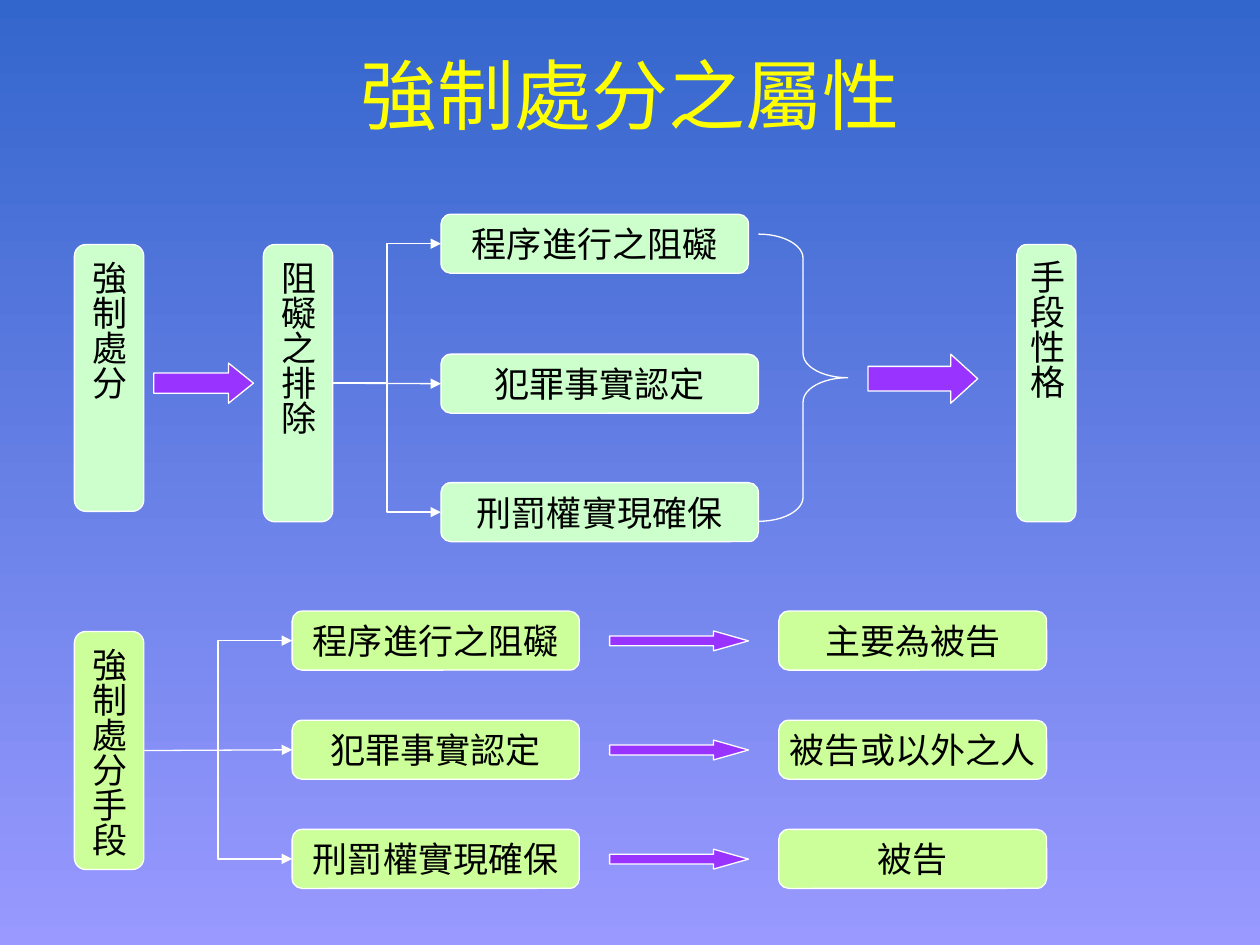
from pptx import Presentation
from pptx.dml.color import RGBColor
from pptx.enum.shapes import MSO_CONNECTOR, MSO_SHAPE
from pptx.enum.text import MSO_ANCHOR, PP_ALIGN
from pptx.oxml.ns import qn
from pptx.util import Cm, Pt
from lxml.etree import SubElement

BG_TOP = RGBColor(0x33, 0x66, 0xCC)
BG_BOTTOM = RGBColor(0x99, 0x99, 0xFF)
YELLOW = RGBColor(0xFF, 0xFF, 0x00)
WHITE = RGBColor(0xFF, 0xFF, 0xFF)
BLACK = RGBColor(0x00, 0x00, 0x00)
MINT = RGBColor(0xCC, 0xFF, 0xCC)
LIME = RGBColor(0xCC, 0xFF, 0x99)
PURPLE = RGBColor(0x99, 0x33, 0xFF)

LEFT_SITE, RIGHT_SITE = 1, 3
BOX_H = 1.19


def write(tf, text, size=20, color=BLACK, font="Arial", wrap=False):
    tf.word_wrap = wrap
    tf.vertical_anchor = MSO_ANCHOR.MIDDLE
    p = tf.paragraphs[0]
    p.alignment = PP_ALIGN.CENTER
    r = p.add_run()
    r.text = text
    r.font.size = Pt(size)
    r.font.name = font
    r.font.color.rgb = color


class Diagram:
    line_color = WHITE
    line_width = Pt(0.75)

    def __init__(self, slide):
        self.s = slide

    def background(self, top, bottom):
        fill = self.s.background.fill
        fill.gradient()
        fill.gradient_angle = 270
        for stop, position, color in zip(fill.gradient_stops, (0, 1), (top, bottom)):
            stop.position = position
            stop.color.rgb = color

    def title(self, text, x, y, w, h):
        sp = self.s.shapes.title
        sp.left, sp.top, sp.width, sp.height = Cm(x), Cm(y), Cm(w), Cm(h)
        write(sp.text_frame, text, size=44, color=YELLOW, wrap=True)

    def outline(self, sp):
        sp.line.color.rgb = self.line_color
        sp.line.width = self.line_width

    def shape(self, kind, x, y, w, h, fill=None, adj=()):
        sp = self.s.shapes.add_shape(kind, Cm(x), Cm(y), Cm(w), Cm(h))
        sp.shadow.inherit = False
        if fill is None:
            sp.fill.background()
        else:
            sp.fill.solid()
            sp.fill.fore_color.rgb = fill
        self.outline(sp)
        for i, value in enumerate(adj):
            sp.adjustments[i] = value
        return sp

    def box(self, text, x, y, w, h, fill, vertical=False):
        sp = self.shape(MSO_SHAPE.FLOWCHART_ALTERNATE_PROCESS, x, y, w, h, fill)
        write(sp.text_frame, text)
        if vertical:
            sp.text_frame._txBody.bodyPr.set("vert", "eaVert")
        return sp

    def arrow(self, x, y, w, h, head):
        self.shape(MSO_SHAPE.RIGHT_ARROW, x, y, w, h, PURPLE, (0.5, head))

    def connect(self, start, end, kind):
        c = self.s.shapes.add_connector(kind, 0, 0, 0, 0)
        c.begin_connect(start, RIGHT_SITE)
        c.end_connect(end, LEFT_SITE)
        self.outline(c)
        SubElement(c.line._get_or_add_ln(), qn("a:tailEnd"), type="triangle")
        SubElement(c._element.spPr, qn("a:effectLst"))

    def branch(self, start, ends):
        kinds = (MSO_CONNECTOR.ELBOW, MSO_CONNECTOR.STRAIGHT, MSO_CONNECTOR.ELBOW)
        for end, kind in zip(ends, kinds):
            self.connect(start, end, kind)


def main():
    prs = Presentation()
    prs.slide_width, prs.slide_height = Cm(25.4), Cm(19.05)
    d = Diagram(prs.slides.add_slide(prs.slide_layouts[5]))
    d.background(BG_TOP, BG_BOTTOM)
    d.title("強制處分之屬性", 0.84, 0.64, 23.72, 2.49)

    topics = ("程序進行之阻礙", "犯罪事實認定", "刑罰權實現確保")

    # Upper flow: measure, obstacles, nature of the means
    d.box("強制處分", 1.5, 4.93, 1.4, 5.38, MINT, vertical=True)
    removal = d.box("阻礙之排除", 5.31, 4.93, 1.4, 5.59, MINT, vertical=True)
    obstacles = [d.box(text, 8.89, y, w, BOX_H, MINT)
                 for text, y, w in zip(topics, (4.32, 7.14, 9.73), (6.2, 6.4, 6.4))]
    d.box("手段性格", 20.5, 4.93, BOX_H, 5.59, MINT, vertical=True)
    d.branch(removal, obstacles)
    d.shape(MSO_SHAPE.RIGHT_BRACE, 15.29, 4.72, 1.8, 5.79, adj=(0.27, 0.5))
    d.arrow(17.5, 7.14, 2.21, 0.99, 0.55)
    d.arrow(3.1, 7.32, 2.01, 0.81, 0.62)

    # Lower flow: each means and the person it targets
    means = d.box("強制處分手段", 1.5, 12.73, 1.4, 4.8, LIME, vertical=True)
    targets = ("主要為被告", "被告或以外之人", "被告")
    purposes = []
    for i, (topic, target) in enumerate(zip(topics, targets)):
        y = 12.32 + 2.2 * i
        purposes.append(d.box(topic, 5.89, y, 5.79, BOX_H, LIME))
        d.box(target, 15.7, y, 5.4, BOX_H, LIME)
        d.arrow(12.29, y + 0.4, 2.8, 0.4, 1.76)
    d.branch(means, purposes)

    prs.save("out.pptx")


if __name__ == "__main__":
    main()
